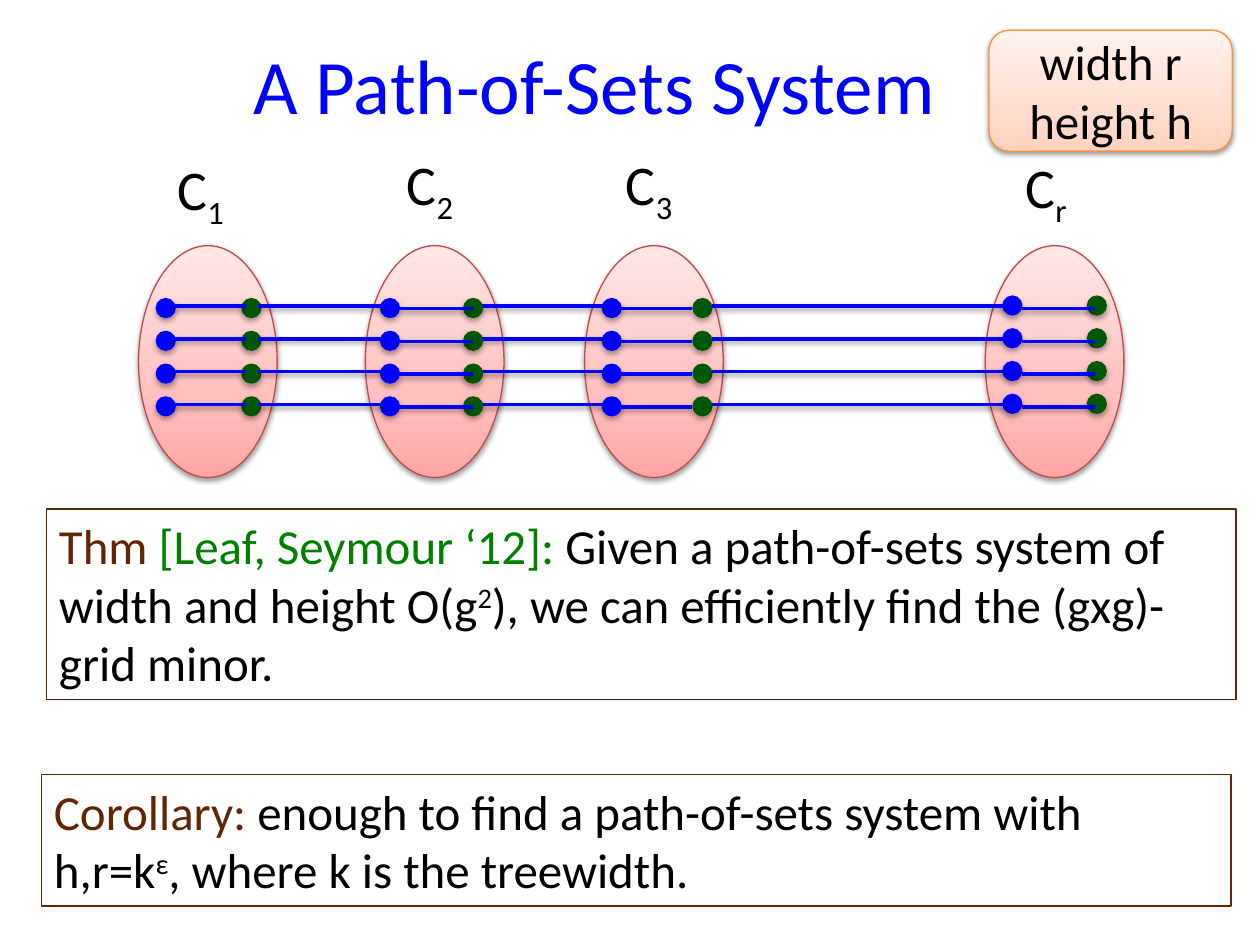
from copy import deepcopy
from dataclasses import dataclass

from lxml.etree import SubElement
from pptx import Presentation
from pptx.dml.color import RGBColor
from pptx.enum.shapes import MSO_CONNECTOR, MSO_SHAPE
from pptx.enum.text import MSO_ANCHOR, MSO_AUTO_SIZE, PP_ALIGN
from pptx.oxml.ns import qn
from pptx.util import Inches, Pt

COLORS = {
    "blue": "0000FF",
    "green": "005800",
    "citation": "008000",
    "brown": "612604",
    "black": "000000",
    "set_edge": "BF4C48",
    "size_edge": "F69240",
}
SET_GRADIENT = ("FFA6A5", "FFC0BF", "FFE7E7")
SIZE_GRADIENT = ("FFD2BD", "FFDED0", "FFF2ED")
GRADIENT_POSITIONS = (0, 0.35, 1)

SLIDE_WIDTH, SLIDE_HEIGHT = Inches(10), Inches(7.5)
COLUMNS, ROWS = 100, 75
PATH_COUNT = 4
PATH_GAP = 2.6
LINK_ROW = 24.3
DOT_SIZE = 1.5
SET_TOP, SET_WIDTH, SET_HEIGHT = 19.5, 11, 18.4
INNER_LENGTH = 5.8


@dataclass(frozen=True)
class Box:
    left: float
    top: float
    width: float
    height: float

    def place(self) -> tuple[int, int, int, int]:
        return col(self.left), row(self.top), col(self.width), row(self.height)


@dataclass(frozen=True)
class Piece:
    text: str
    color: str = "black"
    baseline: int = 0


@dataclass(frozen=True)
class VertexSet:
    index: str
    left: float
    label_left: float
    label_top: float
    entry_left: float
    exit_left: float
    dot_top: float
    inner_left: float
    inner_row: float


@dataclass(frozen=True)
class Link:
    start: float
    end: float


@dataclass(frozen=True)
class Statement:
    box: Box
    pieces: tuple[Piece, ...]


SETS = (
    VertexSet("1", 11, 13.1, 11.8, 12.4, 19.2, 23.7, 13.7, 24.3),
    VertexSet("2", 29, 31.3, 11.4, 30.2, 36.8, 23.7, 31.7, 24.5),
    VertexSet("3", 46.4, 48.7, 11.4, 47.8, 55, 23.7, 49.1, 24.5),
    VertexSet("r", 78.2, 80.4, 11.6, 79.6, 86.3, 23.5, 81.1, 24.5),
)
LINK_BEHIND_DOTS = Link(38.1, 48.1)
LINKS_OVER_DOTS = (Link(56.5, 79.9), Link(20.5, 30.5))
STATEMENTS = (
    Statement(Box(3.7, 40.4, 94.4, 15.1), (
        Piece("Thm ", "brown"),
        Piece("[Leaf, Seymour ‘12]:", "citation"),
        Piece(" Given a path-of-sets system of width and height O(g"),
        Piece("2", baseline=30),
        Piece("), we can efficiently find the (gxg)-grid minor."),
    )),
    Statement(Box(3.3, 61.5, 94.4, 10.4), (
        Piece("Corollary: ", "brown"),
        Piece("enough to find a path-of-sets system with h,r=k"),
        Piece("ε", baseline=30),
        Piece(", where k is the treewidth."),
    )),
)


def col(count: float) -> int:
    return round(SLIDE_WIDTH * count / COLUMNS)


def row(count: float) -> int:
    return round(SLIDE_HEIGHT * count / ROWS)


def rgb(name: str) -> RGBColor:
    return RGBColor.from_string(COLORS[name])


def set_line(item, color: str, width: float = 0.75) -> None:
    item.line.color.rgb = rgb(color)
    item.line.width = Pt(width)


def cast_shadow(item, opacity: int = 38, distance: float = 1.6) -> None:
    effects = SubElement(item._element.spPr, qn("a:effectLst"))
    shadow = SubElement(effects, qn("a:outerShdw"), blurRad=str(Pt(3.1)),
                        dist=str(Pt(distance)), dir="5400000", rotWithShape="0")
    tone = SubElement(shadow, qn("a:srgbClr"), val=COLORS["black"])
    SubElement(tone, qn("a:alpha"), val=str(opacity * 1000))


def fill_gradient(shape, tones: tuple[str, ...]) -> None:
    shape.fill.gradient()
    shape.fill.gradient_angle = 90
    stop_list = shape._element.spPr.find(".//" + qn("a:gsLst"))
    stop_list.append(deepcopy(stop_list[-1]))
    for stop, tone, position in zip(shape.fill.gradient_stops, tones, GRADIENT_POSITIONS):
        stop.color.rgb = RGBColor.from_string(tone)
        stop.position = position


def format_run(run, size: float, color: str) -> None:
    run.font.name = "Calibri"
    run.font.size = Pt(size)
    run.font.color.rgb = rgb(color)


def draw_text(slide, box: Box, pieces: tuple[Piece, ...], size: float):
    caption = slide.shapes.add_textbox(*box.place())
    frame = caption.text_frame
    frame.word_wrap = True
    frame.auto_size = MSO_AUTO_SIZE.SHAPE_TO_FIT_TEXT
    for piece in pieces:
        run = frame.paragraphs[0].add_run()
        run.text = piece.text
        format_run(run, size, piece.color)
        if piece.baseline:
            run.font._element.set("baseline", str(piece.baseline * 1000))
    return caption


def draw_set(slide, vertex_set: VertexSet) -> None:
    oval = slide.shapes.add_shape(
        MSO_SHAPE.OVAL, *Box(vertex_set.left, SET_TOP, SET_WIDTH, SET_HEIGHT).place())
    fill_gradient(oval, SET_GRADIENT)
    set_line(oval, "set_edge")
    cast_shadow(oval)
    draw_text(slide, Box(vertex_set.label_left, vertex_set.label_top, 7, 6.4),
              (Piece("C"), Piece(vertex_set.index, baseline=-25)), 32)


def draw_dots(slide, left: float, top: float, color: str) -> None:
    for path_index in range(PATH_COUNT):
        dot = slide.shapes.add_shape(
            MSO_SHAPE.OVAL,
            *Box(left, top + path_index * PATH_GAP, DOT_SIZE, DOT_SIZE).place())
        dot.fill.solid()
        dot.fill.fore_color.rgb = rgb(color)
        set_line(dot, color)
        cast_shadow(dot, 35, 1.8)


def draw_paths(slide, link: Link, first_row: float = LINK_ROW) -> None:
    for path_index in range(PATH_COUNT):
        level = row(first_row + path_index * PATH_GAP)
        segment = slide.shapes.add_connector(
            MSO_CONNECTOR.STRAIGHT, col(link.start), level, col(link.end), level)
        set_line(segment, "blue", 2)
        cast_shadow(segment)


def draw_title(slide) -> None:
    title = draw_text(slide, Box(2.2, 0.4, 90, 12.5),
                      (Piece("A Path-of-Sets System", "blue"),), 44)
    title.text_frame.auto_size = MSO_AUTO_SIZE.NONE
    title.text_frame.vertical_anchor = MSO_ANCHOR.MIDDLE
    title.text_frame.paragraphs[0].alignment = PP_ALIGN.CENTER


def draw_size_note(slide) -> None:
    note = slide.shapes.add_shape(
        MSO_SHAPE.ROUNDED_RECTANGLE, *Box(78.5, 2.4, 19.3, 9.6).place())
    fill_gradient(note, SIZE_GRADIENT)
    set_line(note, "size_edge")
    cast_shadow(note)
    note.text_frame.text = "width r\nheight h"
    note.text_frame.vertical_anchor = MSO_ANCHOR.MIDDLE
    for paragraph in note.text_frame.paragraphs:
        paragraph.alignment = PP_ALIGN.CENTER
        format_run(paragraph.runs[0], 28, "black")


def main() -> None:
    deck = Presentation()
    deck.slide_width, deck.slide_height = SLIDE_WIDTH, SLIDE_HEIGHT
    slide = deck.slides.add_slide(deck.slide_layouts[6])
    for vertex_set in SETS:
        draw_set(slide, vertex_set)
    draw_paths(slide, LINK_BEHIND_DOTS)
    for vertex_set in SETS:
        draw_dots(slide, vertex_set.entry_left, vertex_set.dot_top, "blue")
        draw_dots(slide, vertex_set.exit_left, vertex_set.dot_top, "green")
    draw_title(slide)
    draw_size_note(slide)
    for link in LINKS_OVER_DOTS:
        draw_paths(slide, link)
    for vertex_set in SETS:
        inner = Link(vertex_set.inner_left, vertex_set.inner_left + INNER_LENGTH)
        draw_paths(slide, inner, vertex_set.inner_row)
    for statement in STATEMENTS:
        set_line(draw_text(slide, statement.box, statement.pieces, 28), "brown")
    deck.save("out.pptx")


if __name__ == "__main__":
    main()
